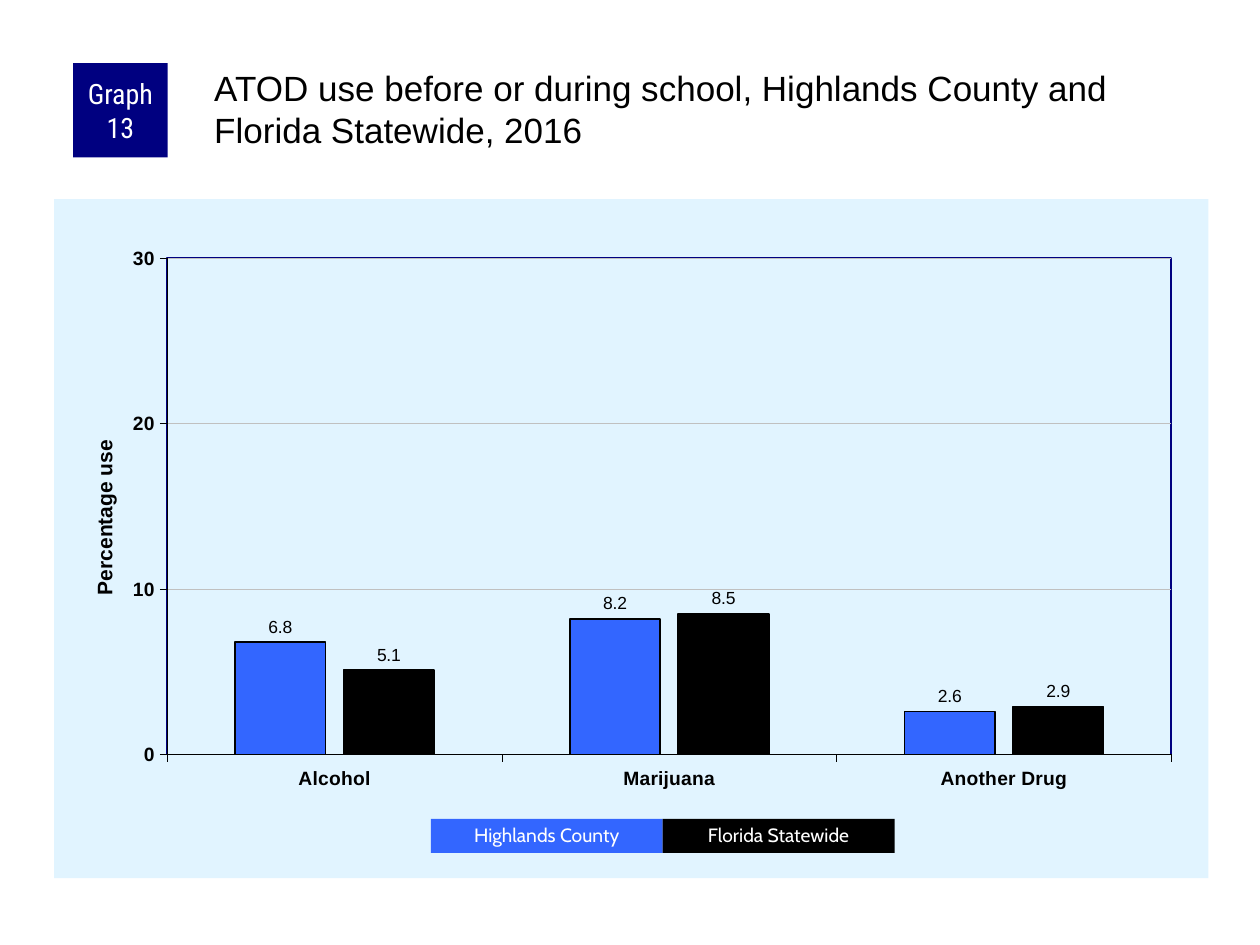
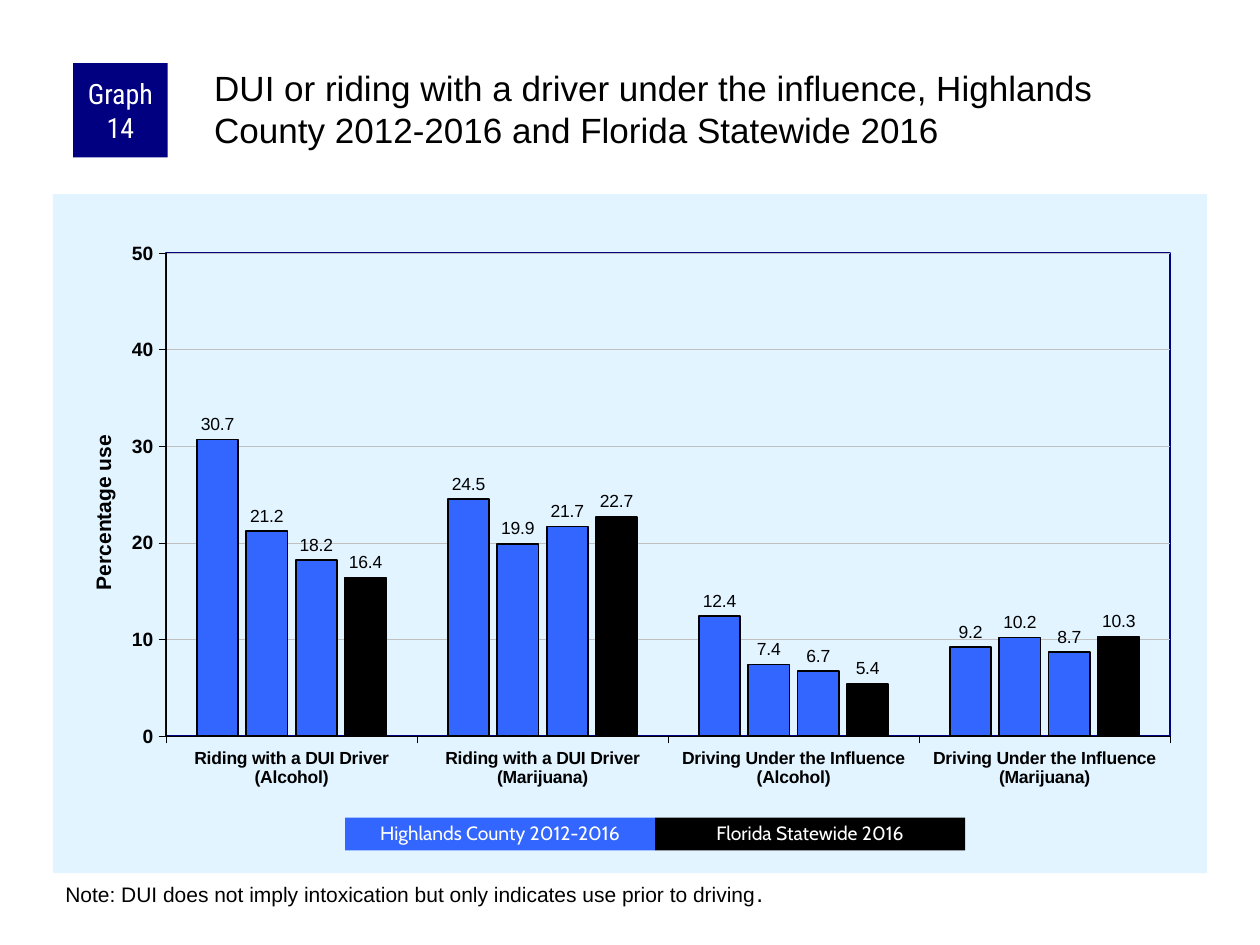
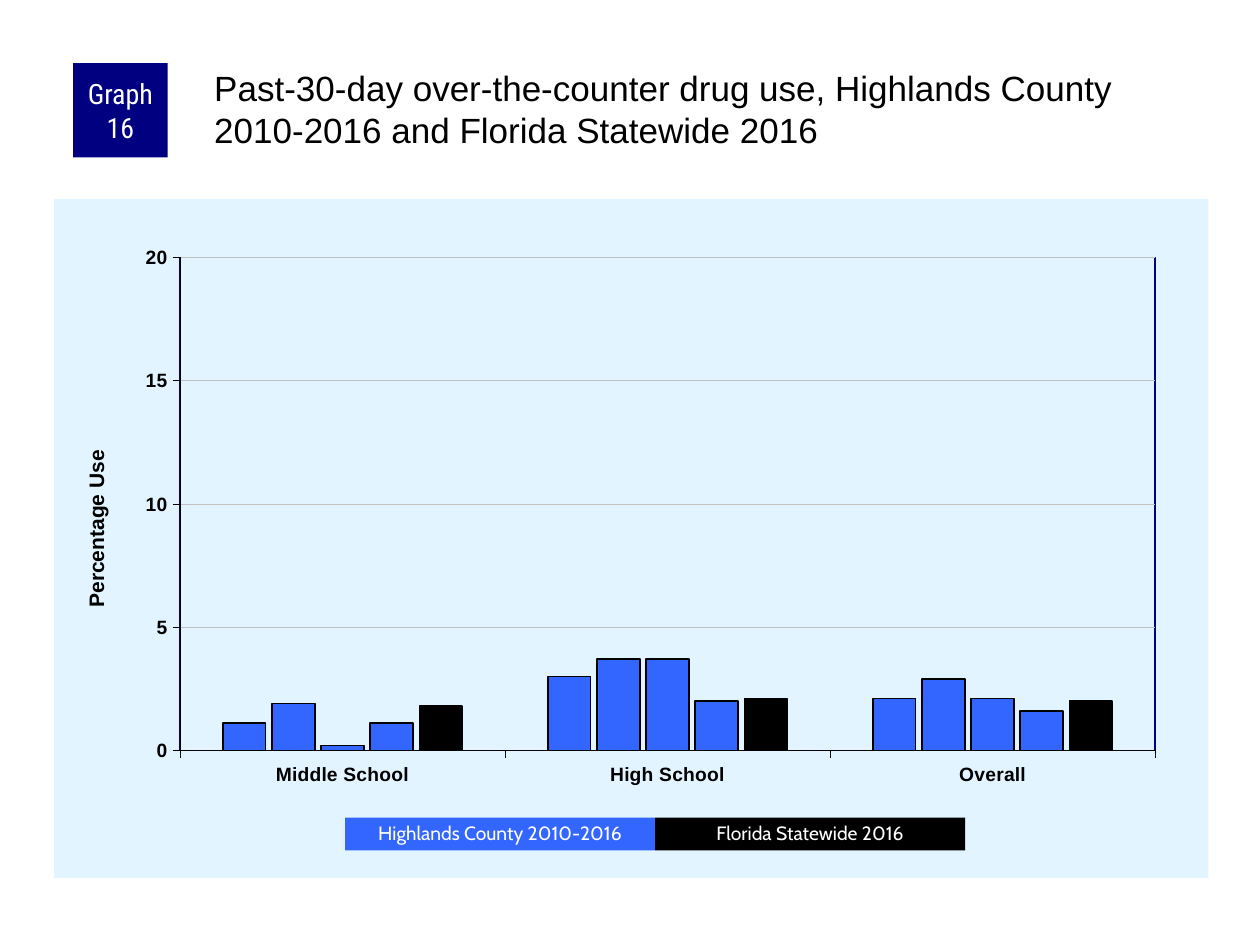
from pptx import Presentation
from pptx.chart.data import CategoryChartData as Data
from pptx.dml.color import RGBColor
from pptx.enum.chart import XL_CHART_TYPE as Kind, XL_LABEL_POSITION as Spot, XL_TICK_MARK as Tick
from pptx.enum.shapes import MSO_SHAPE as Form
from pptx.enum.text import MSO_ANCHOR as Anchor, PP_ALIGN as Align
from pptx.oxml import parse_xml
from pptx.oxml.ns import nsdecls, qn
from pptx.util import Inches, Pt

WHITE = RGBColor(0xFF, 0xFF, 0xFF)
BLACK = RGBColor(0, 0, 0)
NAVY = RGBColor(0, 0, 0x80)
BLUE = RGBColor(0x33, 0x66, 0xFF)
PALE = RGBColor(0xE1, 0xF4, 0xFF)
GREY = RGBColor(0xC0, 0xC0, 0xC0)

GRAPHS = [
    dict(
        tag="Graph 13",
        title="ATOD use before or during school, Highlands County and Florida Statewide, 2016",
        spot=(0.43, 1.58), plot=(0.098, 0.087, 0.87, 0.731), frame=1,
        axis="Percentage use", mark=(0.029, 0.349), top=30, step=10,
        cats=["Alcohol", "Marijuana", "Another Drug"], size=11,
        rows=[(6.8, 8.2, 2.6), (5.1, 8.5, 2.9)],
        gap=150, lap=-20, labels=True,
        keys=["Highlands County", "Florida Statewide"], key=(3.42, 6.5, 1.84, 0.27),
    ),
    dict(
        tag="Graph 14",
        title="DUI or riding with a driver under the influence, Highlands County 2012-2016 "
              "and Florida Statewide 2016",
        spot=(0.42, 1.54), plot=(0.098, 0.087, 0.87, 0.711), frame=0.75,
        axis="Percentage use", mark=(0.029, 0.349), top=50, step=10,
        cats=["Riding with a DUI Driver (Alcohol)", "Riding with a DUI Driver (Marijuana)",
              "Driving Under the Influence (Alcohol)", "Driving Under the Influence (Marijuana)"],
        size=10,
        rows=[(30.7, 24.5, 12.4, 9.2), (21.2, 19.9, 7.4, 10.2),
              (18.2, 21.7, 6.7, 8.7), (16.4, 22.7, 5.4, 10.3)],
        gap=150, lap=-20, labels=True,
        keys=["Highlands County 2012-2016", "Florida Statewide 2016"], key=(2.74, 6.49, 2.46, 0.26),
        note="Note: DUI does not imply intoxication but only indicates use prior to driving",
    ),
    dict(
        tag="Graph 16",
        title="Past-30-day over-the-counter drug use, Highlands County 2010-2016 "
              "and Florida Statewide 2016",
        spot=(0.43, 1.58), plot=(0.109, 0.086, 0.845, 0.726), frame=1,
        axis="Percentage Use", mark=(0.022, 0.364), top=20, step=5,
        cats=["Middle School", "High School", "Overall"], size=11,
        rows=[(1.1, 3, 2.1), (1.9, 3.7, 2.9), (0.2, 3.7, 2.1), (1.1, 2, 1.6), (1.8, 2.1, 2)],
        gap=200, lap=-15, labels=False,
        keys=["Highlands County 2010-2016", "Florida Statewide 2016"], key=(2.74, 6.49, 2.46, 0.26),
    ),
]


def write(slide, text, box, size=20, font="Arial", color=BLACK, fill=None,
          inset=(0.1, 0.05, 0.1, 0.05), space=None):
    """Add a plain text box, or a centred filled box when fill is given."""
    box = [Inches(n) for n in box]
    if fill is None:
        shape = slide.shapes.add_textbox(*box)
    else:
        shape = slide.shapes.add_shape(Form.RECTANGLE, *box)
        shape.shadow.inherit = False
        shape.fill.solid()
        shape.fill.fore_color.rgb = fill
        shape.line.fill.background()
    frame = shape.text_frame
    frame.word_wrap = True
    frame.vertical_anchor = Anchor.TOP if fill is None else Anchor.MIDDLE
    frame.margin_left, frame.margin_top, frame.margin_right, frame.margin_bottom = map(Inches, inset)
    par = frame.paragraphs[0]
    par.alignment = Align.LEFT if fill is None else Align.CENTER
    par.line_spacing = space
    run = par.add_run()
    run.text = text
    run.font.size, run.font.name, run.font.color.rgb = Pt(size), font, color
    return par


def place(part, at, spots, target=""):
    """Give a chart part a manual layout, as shares of the chart's size."""
    old = part.find(qn("c:layout"))
    if old is not None:
        part.remove(old)
    modes = '<c:xMode val="edge"/><c:yMode val="edge"/>'
    sizes = "".join(f'<c:{n} val="{v}"/>' for n, v in zip("xywh", spots))
    part.insert(at, parse_xml(f'<c:layout {nsdecls("c")}><c:manualLayout>{target}{modes}{sizes}'
                              '</c:manualLayout></c:layout>'))


deck = Presentation()
deck.slide_width, deck.slide_height = Inches(10), Inches(7.5)

for graph in GRAPHS:
    slide = deck.slides.add_slide(deck.slide_layouts[6])

    data = Data(number_format="0.0")
    data.categories = graph["cats"]
    for num, row in enumerate(graph["rows"], 1):
        data.add_series(f"Series {num}", row)
    left, top = graph["spot"]
    chart = slide.shapes.add_chart(Kind.COLUMN_CLUSTERED, Inches(left), Inches(top),
                                   Inches(9.16), Inches(5.39), data).chart
    chart.has_legend = chart.has_title = False
    chart.font.size, chart.font.name, chart.font.color.rgb = Pt(11.5), "Arial", BLACK

    # Pale chart ground and navy plot frame
    root = chart._chartSpace
    root.chart.addnext(parse_xml(
        f'<c:spPr {nsdecls("c", "a")}><a:solidFill><a:srgbClr val="{PALE}"/></a:solidFill>'
        '<a:ln><a:noFill/></a:ln></c:spPr>'))
    area = root.chart.plotArea
    place(area, 0, graph["plot"], '<c:layoutTarget val="inner"/>')
    area.append(parse_xml(
        f'<c:spPr {nsdecls("c", "a")}><a:noFill/><a:ln w="{Pt(graph["frame"])}">'
        f'<a:solidFill><a:srgbClr val="{NAVY}"/></a:solidFill></a:ln></c:spPr>'))

    cat, val = chart.category_axis, chart.value_axis
    for axis, size in ((cat, graph["size"]), (val, 11)):
        axis.major_tick_mark, axis.minor_tick_mark = Tick.OUTSIDE, Tick.NONE
        axis.format.line.color.rgb = BLACK
        axis.format.line.width = Pt(0.25)
        font = axis.tick_labels.font
        font.size, font.bold, font.name, font.color.rgb = Pt(size), True, "Arial", BLACK
    val.minimum_scale, val.maximum_scale, val.major_unit = 0, graph["top"], graph["step"]
    val.tick_labels.number_format = "0"
    val.tick_labels.number_format_is_linked = False
    val.has_major_gridlines = True
    grid = val.major_gridlines.format.line
    grid.color.rgb, grid.width = GREY, Pt(0.25)

    title = val.axis_title
    title.text_frame.text = graph["axis"]
    font = title.text_frame.paragraphs[0].runs[0].font
    font.size, font.bold, font.name, font.color.rgb = Pt(12), True, "Arial", BLACK
    turn = title.text_frame._txBody.bodyPr
    turn.set("rot", "-5400000")
    turn.set("vert", "horz")
    place(title._element, 1, graph["mark"])

    plot = chart.plots[0]
    plot.gap_width, plot.overlap, plot.vary_by_categories = graph["gap"], graph["lap"], False
    for num, bars in enumerate(plot.series, 1):
        bars.format.fill.solid()
        bars.format.fill.fore_color.rgb = BLACK if num == len(graph["rows"]) else BLUE
        bars.format.line.color.rgb = BLACK
        bars.format.line.width = Pt(1)
    if graph["labels"]:
        plot.has_data_labels = True
        labels = plot.data_labels
        labels.show_value, labels.position = True, Spot.OUTSIDE_END
        labels.number_format, labels.number_format_is_linked = "0.0", False
        labels.font.size, labels.font.name, labels.font.color.rgb = Pt(10), "Arial", BLACK

    write(slide, graph["tag"], (0.58, 0.5, 0.75, 0.75), size=16, font="Roboto Condensed",
          color=WHITE, fill=NAVY, inset=(0.05, 0, 0.05, 0))
    write(slide, graph["title"], (1.67, 0.5, 7.92, 0.83), inset=(0.03, 0.03, 0, 0))
    left, top, wide, high = graph["key"]
    for num, (name, fill) in enumerate(zip(graph["keys"], (BLUE, BLACK))):
        write(slide, name, (left + num * wide, top, wide, high), size=11, font="Cabin",
              color=WHITE, fill=fill, space=0.9)
    if "note" in graph:
        dot = write(slide, graph["note"], (0.42, 6.92, 9.17, 0.34), size=12).add_run()
        dot.text = "."
        dot.font.size, dot.font.name, dot.font.color.rgb = Pt(14), "Arial", BLACK

deck.save("out.pptx")
